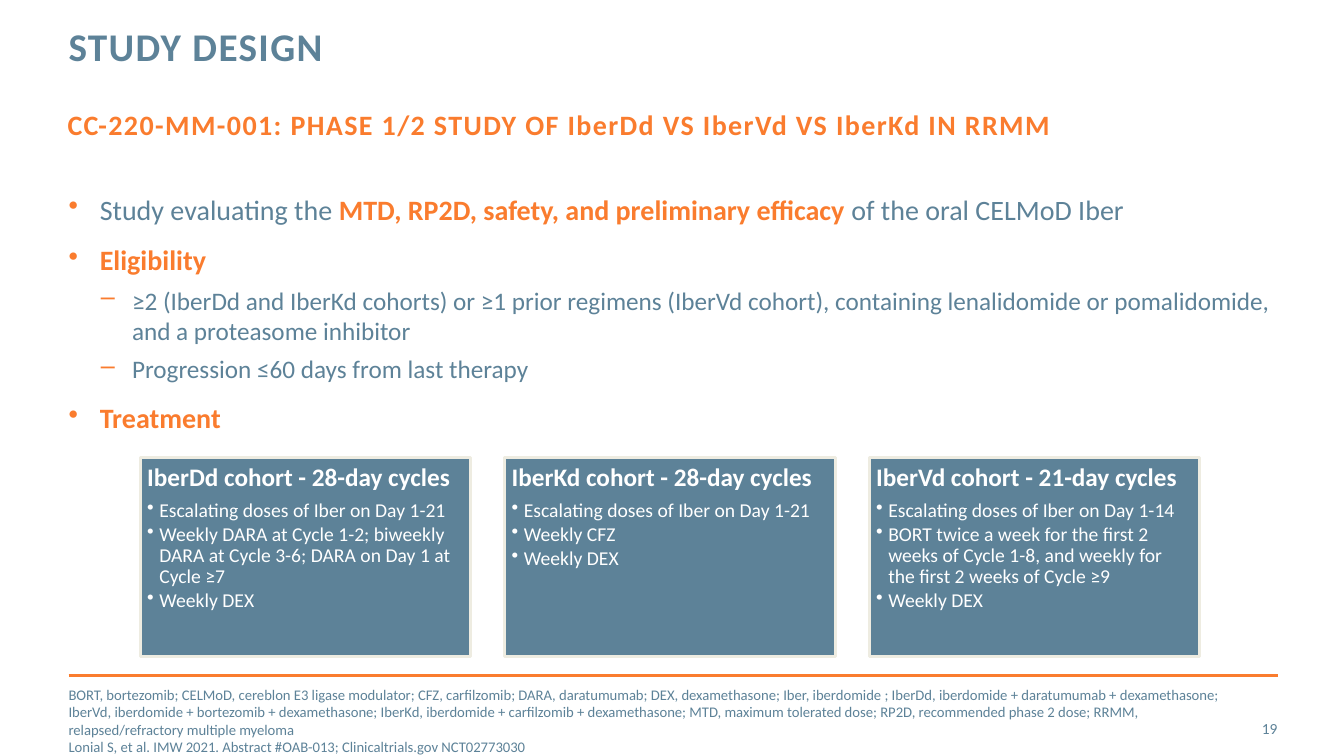
"""Build the study design slide of the CC-220-MM-001 trial."""
from collections import namedtuple

from lxml import etree
from pptx import Presentation
from pptx.dml.color import RGBColor
from pptx.enum.shapes import MSO_CONNECTOR, MSO_SHAPE
from pptx.enum.text import MSO_ANCHOR, PP_ALIGN
from pptx.oxml.ns import qn
from pptx.util import Inches, Pt

STRAIGHT = MSO_CONNECTOR.STRAIGHT
RECTANGLE = MSO_SHAPE.RECTANGLE
TOP, MIDDLE = MSO_ANCHOR.TOP, MSO_ANCHOR.MIDDLE
LEFT, RIGHT = PP_ALIGN.LEFT, PP_ALIGN.RIGHT

SLATE = RGBColor(0x5D, 0x82, 0x98)
ORANGE = RGBColor(0xFA, 0x7C, 0x2E)
CREAM = RGBColor(0xEE, 0xEC, 0xE1)
WHITE = RGBColor(0xFF, 0xFF, 0xFF)
FONT = "Calibri"

SLIDE_WIDTH, SLIDE_HEIGHT = 13.33, 7.5
MARGIN, CONTENT_WIDTH = 0.68, 12
CARD_WIDTH, CARD_PADDING = 3.28, 0.07

Box = namedtuple("Box", "left top width height")

COHORTS = [
    ("IberDd cohort - 28-day cycles", [
        "Escalating doses of Iber on Day 1-21",
        "Weekly DARA at Cycle 1-2; biweekly DARA at Cycle 3-6; DARA on Day 1 at Cycle ≥7",
        "Weekly DEX"]),
    ("IberKd cohort - 28-day cycles", [
        "Escalating doses of Iber on Day 1-21", "Weekly CFZ", "Weekly DEX"]),
    ("IberVd cohort - 21-day cycles", [
        "Escalating doses of Iber on Day 1-14",
        "BORT twice a week for the first 2 weeks of Cycle 1-8, "
        "and weekly for the first 2 weeks of Cycle ≥9",
        "Weekly DEX"]),
]
ABBREVIATIONS = (
    "BORT, bortezomib; CELMoD, cereblon E3 ligase modulator; CFZ, carfilzomib; "
    "DARA, daratumumab; DEX, dexamethasone; Iber, iberdomide ; "
    "IberDd, iberdomide + daratumumab + dexamethasone; "
    "IberVd, iberdomide + bortezomib + dexamethasone; "
    "IberKd, iberdomide + carfilzomib + dexamethasone; MTD, maximum tolerated dose; "
    "RP2D, recommended phase 2 dose; RRMM, relapsed/refractory multiple myeloma")
CITATION = "Lonial S, et al. IMW 2021. Abstract #OAB-013; Clinicaltrials.gov NCT02773030"


def add_run(paragraph, text, size=20, color=SLATE, bold=False, tracking=0):
    """Add formatted text to a paragraph; tracking is in points."""
    run = paragraph.add_run()
    run.text = text
    run.font.name, run.font.size, run.font.bold = FONT, Pt(size), bold
    run.font.color.rgb = color
    if tracking:
        run.font._element.set("spc", str(tracking * 100))


def set_bullet(paragraph, symbol, color, indent, hanging):
    """Give a paragraph a bullet with a hanging indent in inches."""
    properties = paragraph._p.get_or_add_pPr()
    properties.set("marL", str(Inches(indent)))
    properties.set("indent", str(-Inches(hanging)))
    bullet_color = etree.SubElement(properties, qn("a:buClr"))
    etree.SubElement(bullet_color, qn("a:srgbClr")).set("val", str(color))
    etree.SubElement(properties, qn("a:buChar")).set("char", symbol)


def add_paragraph(frame, text="", align=LEFT, before=0, after=0, line_spacing=None,
                  bullet=None, level=0, **font):
    """Write the next paragraph of a text frame and return it."""
    first = frame.paragraphs[0]
    paragraph = frame.add_paragraph() if first.runs else first
    paragraph.alignment, paragraph.level = align, level
    paragraph.space_before, paragraph.space_after = Pt(before), Pt(after)
    paragraph.line_spacing = line_spacing
    if bullet:
        set_bullet(paragraph, *bullet)
    if text:
        add_run(paragraph, text, **font)
    return paragraph


def prepare_frame(shape, padding=0, anchor=TOP):
    """Set wrapping, padding and anchor of a shape's text frame."""
    frame = shape.text_frame
    frame.word_wrap, frame.vertical_anchor = True, anchor
    frame.margin_left = frame.margin_right = Inches(padding)
    frame.margin_top = frame.margin_bottom = Inches(padding)
    return frame


def add_text_frame(slide, box, anchor=TOP):
    """Add a text box without padding and return its frame."""
    return prepare_frame(slide.shapes.add_textbox(*map(Inches, box)), anchor=anchor)


def add_headings(slide, box):
    """Place the title and the orange study heading."""
    title = add_text_frame(slide, Box(box.left, box.top, 9.56, 0.57))
    add_paragraph(title, "STUDY DESIGN", size=28, bold=True, tracking=1,
                  line_spacing=Pt(30))
    heading = add_text_frame(slide, Box(box.left - 0.01, box.top + 0.8, box.width, 0.77))
    add_paragraph(heading, "CC-220-MM-001: PHASE 1/2 STUDY OF IberDd VS IberVd VS IberKd IN RRMM",
                  color=ORANGE, bold=True, tracking=1)


def add_outline(slide, box):
    """Place the bulleted outline of the study."""
    frame = add_text_frame(slide, box)
    main = {"bullet": ("•", ORANGE, 0.31, 0.31)}
    topic = {**main, "before": 12, "color": ORANGE, "bold": True}
    detail = {"bullet": ("–", ORANGE, 0.63, 0.31), "level": 1, "before": 6, "size": 18}
    aim = add_paragraph(frame, "Study evaluating the ", **main)
    add_run(aim, "MTD, RP2D, safety, and preliminary efficacy", color=ORANGE, bold=True)
    add_run(aim, " of the oral CELMoD Iber")
    add_paragraph(frame, "Eligibility", **topic)
    add_paragraph(frame, "≥2 (IberDd and IberKd cohorts) or ≥1 prior regimens (IberVd cohort), "
                  "containing lenalidomide or pomalidomide, and a proteasome inhibitor", **detail)
    add_paragraph(frame, "Progression ≤60 days from last therapy", **detail)
    add_paragraph(frame, "Treatment", **topic)


def add_cohort_card(slide, box, heading, doses):
    """Place one cohort card with its heading and doses."""
    card = slide.shapes.add_shape(RECTANGLE, *map(Inches, box))
    card.shadow.inherit = False
    card.fill.solid()
    card.fill.fore_color.rgb = SLATE
    card.line.color.rgb, card.line.width = CREAM, Pt(2)
    frame = prepare_frame(card, padding=CARD_PADDING)
    add_paragraph(frame, heading, size=18, color=WHITE, bold=True, line_spacing=0.9, after=6)
    for dose in doses:
        add_paragraph(frame, dose, size=14, color=WHITE, line_spacing=0.9, after=2,
                      level=1, bullet=("•", WHITE, 0.12, 0.12))


def add_cohorts(slide, box):
    """Spread the cohort cards evenly over the box."""
    pitch = (box.width - CARD_WIDTH) / (len(COHORTS) - 1)
    for index, (heading, doses) in enumerate(COHORTS):
        card_box = Box(box.left + index * pitch, box.top, CARD_WIDTH, box.height)
        add_cohort_card(slide, card_box, heading, doses)


def add_footer(slide, box):
    """Place the rule, the footnote and the slide number."""
    right = box.left + box.width
    rule = slide.shapes.add_connector(
        STRAIGHT, *map(Inches, (box.left, box.top, right, box.top)))
    rule.line.color.rgb, rule.line.width = ORANGE, Pt(2)
    etree.SubElement(rule._element.spPr, qn("a:effectLst"))
    footnote = add_text_frame(slide, Box(box.left, box.top + 0.25, 11.72, 0.4), MIDDLE)
    for text in (ABBREVIATIONS, CITATION):
        add_paragraph(footnote, text, size=10.5)
    number = add_text_frame(slide, Box(right - 0.87, box.top + 0.33, 0.86, 0.4), MIDDLE)
    add_paragraph(number, "19", size=11, align=RIGHT)


def main():
    """Build and save the presentation."""
    presentation = Presentation()
    presentation.slide_width = Inches(SLIDE_WIDTH)
    presentation.slide_height = Inches(SLIDE_HEIGHT)
    slide = presentation.slides.add_slide(presentation.slide_layouts[6])
    add_footer(slide, Box(MARGIN, 6.7, CONTENT_WIDTH, 0.8))
    add_headings(slide, Box(MARGIN, 0.27, CONTENT_WIDTH, 1.57))
    add_outline(slide, Box(MARGIN, 1.91, CONTENT_WIDTH, 4.6))
    add_cohorts(slide, Box(1.39, 4.54, 10.51, 1.97))
    presentation.save("out.pptx")


if __name__ == "__main__":
    main()
